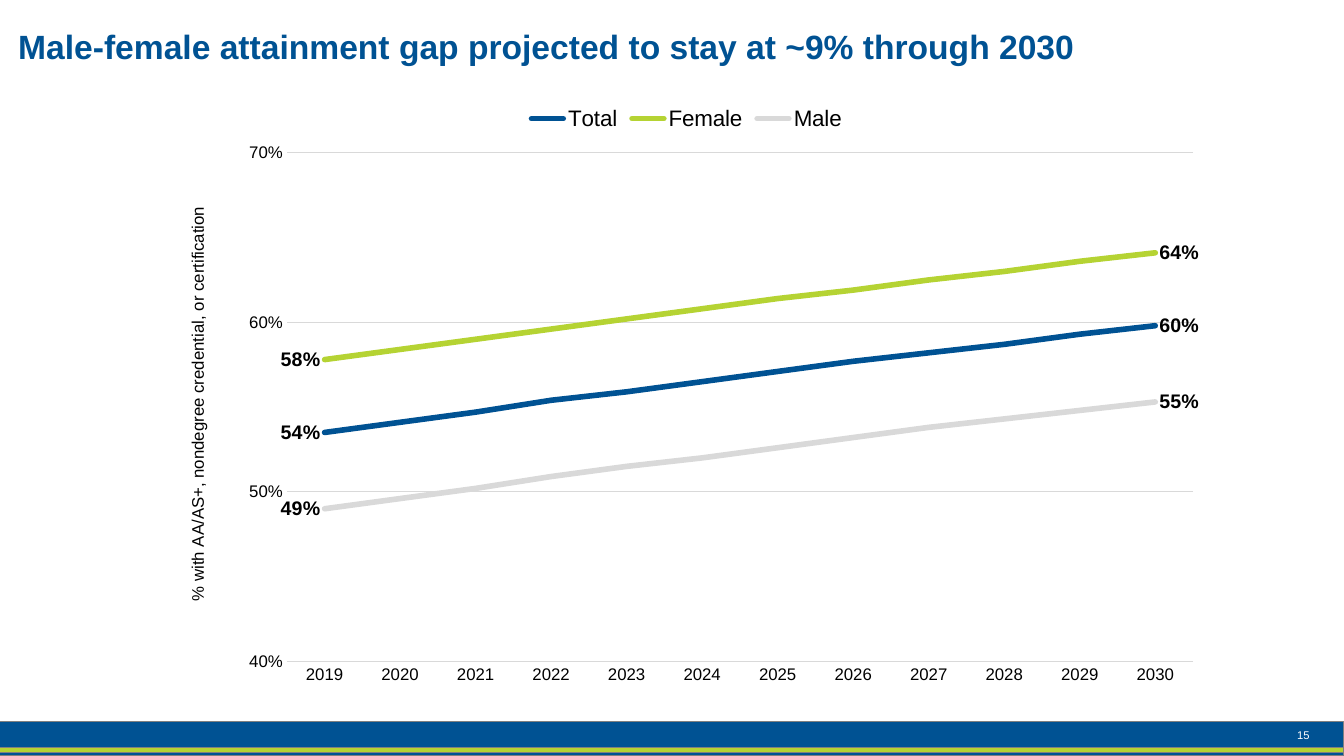
"""Build a slide charting projected attainment by gender from 2019 to 2030."""
from typing import NamedTuple

from lxml import etree
from pptx import Presentation, util as u
from pptx.chart.data import CategoryChartData
from pptx.dml.color import RGBColor
from pptx.enum import chart as charts, shapes, text
from pptx.oxml.ns import qn

BLUE = RGBColor(0x00, 0x52, 0x93)
LIME = RGBColor(0xB5, 0xD3, 0x33)
LIGHT_GRAY = RGBColor(0xD9, 0xD9, 0xD9)
GRAY = RGBColor(0x80, 0x80, 0x80)
BLACK = RGBColor(0, 0, 0)
WHITE = RGBColor(0xFF, 0xFF, 0xFF)
FONT = "Arial"


class Band(NamedTuple):
    top: float
    height: float
    color: RGBColor


class Trend(NamedTuple):
    name: str
    color: RGBColor
    values: tuple[float, ...]


BANDS = (Band(7.16, 0.34, BLUE), Band(7.42, 0.05, LIME))
YEARS = [str(year) for year in range(2019, 2031)]
TRENDS = (
    Trend("Total", BLUE, (0.535, 0.541, 0.547, 0.554, 0.559, 0.565,
                          0.571, 0.577, 0.582, 0.587, 0.593, 0.598)),
    Trend("Female", LIME, (0.578, 0.584, 0.590, 0.596, 0.602, 0.608,
                           0.614, 0.619, 0.625, 0.630, 0.636, 0.641)),
    Trend("Male", LIGHT_GRAY, (0.490, 0.496, 0.502, 0.509, 0.515, 0.520,
                               0.526, 0.532, 0.538, 0.543, 0.548, 0.553)),
)


def style_font(font, size: float, color: RGBColor = BLACK, bold: bool = False) -> None:
    """Set the typeface, size, color and weight of a font."""
    font.name, font.size, font.bold = FONT, u.Pt(size), bold
    font.color.rgb = color


def add_text(page, words: str, *, left: float, top: float, width: float, height: float,
             size: float, color: RGBColor, bold: bool = False, wrap: bool = True,
             align=text.PP_ALIGN.LEFT, anchor=text.MSO_ANCHOR.TOP) -> None:
    """Add a text box without margins."""
    box = page.shapes.add_textbox(*map(u.Inches, (left, top, width, height)))
    frame = box.text_frame
    frame.margin_left = frame.margin_right = frame.margin_top = frame.margin_bottom = 0
    frame.word_wrap, frame.vertical_anchor = wrap, anchor
    para = frame.paragraphs[0]
    para.alignment = align
    span = para.add_run()
    span.text = words
    style_font(span.font, size, color, bold)


def add_band(page, band: Band) -> None:
    """Add a full-width footer band."""
    box = page.shapes.add_shape(shapes.MSO_SHAPE.RECTANGLE, 0, u.Inches(band.top),
                                u.Inches(13.33), u.Inches(band.height))
    box.shadow.inherit = False
    box.fill.solid()
    box.fill.fore_color.rgb = band.color
    box.line.color.rgb = GRAY
    box.line.width = u.Pt(0.75)


def set_layout(parent, **settings: str | float) -> None:
    """Give a chart part a manual layout."""
    layout = parent.find(qn("c:layout"))
    if layout is None:
        layout = etree.Element(qn("c:layout"))
        tx = parent.find(qn("c:tx"))
        parent.insert(0 if tx is None else 1, layout)
    manual = etree.SubElement(layout, qn("c:manualLayout"))
    for name, value in settings.items():
        etree.SubElement(manual, qn(f"c:{name}")).set("val", str(value))


def style_axes(chart) -> None:
    """Format both axes, the gridlines and the axis title."""
    years, shares = chart.category_axis, chart.value_axis
    for axis in (years, shares):
        axis.major_tick_mark = axis.minor_tick_mark = charts.XL_TICK_MARK.NONE
        style_font(axis.tick_labels.font, 12)
    shares.minimum_scale, shares.maximum_scale, shares.major_unit = 0.4, 0.7, 0.1
    shares.tick_labels.number_format = "0%"
    shares.tick_labels.number_format_is_linked = False
    shares.format.line.fill.background()
    for line in (years.format.line, shares.major_gridlines.format.line):
        line.color.rgb = LIGHT_GRAY
        line.width = u.Pt(0.75)
    title = shares.axis_title
    frame = title.text_frame
    span = frame.paragraphs[0].add_run()
    span.text = "% with AA/AS+, nondegree credential, or certification"
    style_font(span.font, 12)
    body = title._element.find(".//" + qn("a:bodyPr"))
    body.set("rot", "-5400000")
    body.set("vert", "horz")
    set_layout(title._element, xMode="edge", yMode="edge", x=0.02, y=0.18)


def style_trend(series, trend: Trend) -> None:
    """Format a line and label its two ends."""
    series.smooth = False
    series.marker.style = charts.XL_MARKER_STYLE.NONE
    series.format.line.color.rgb = trend.color
    series.format.line.width = u.Pt(4)
    series._element.find(".//" + qn("a:ln")).set("cap", "rnd")
    series.data_labels.show_value = False
    ends = ((0, charts.XL_LABEL_POSITION.LEFT),
            (len(YEARS) - 1, charts.XL_LABEL_POSITION.RIGHT))
    for index, position in ends:
        label = series.points[index].data_label
        style_font(label.font, 14, bold=True)
        label.position = position


def add_trend_chart(page) -> None:
    """Add the attainment line chart."""
    data = CategoryChartData(number_format="0%")
    data.categories = YEARS
    for trend in TRENDS:
        data.add_series(trend.name, trend.values)
    chart = page.shapes.add_chart(charts.XL_CHART_TYPE.LINE,
                                  *map(u.Inches, (1.62, 0.94, 10.38, 6)), data).chart
    chart.has_title = False
    style_font(chart.font, 12)
    chart.has_legend = True
    chart.legend.position = charts.XL_LEGEND_POSITION.TOP
    chart.legend.include_in_layout = False
    style_font(chart.legend.font, 16)
    style_axes(chart)
    plot = chart.plots[0]
    plot.vary_by_categories = False
    for series, trend in zip(plot.series, TRENDS):
        style_trend(series, trend)
    set_layout(chart._chartSpace.find(".//" + qn("c:plotArea")), layoutTarget="inner",
               xMode="edge", yMode="edge", x=0.118, y=0.096, w=0.866, h=0.841)


def main() -> None:
    """Build and save the deck."""
    deck = Presentation()
    deck.slide_width, deck.slide_height = u.Inches(13.33), u.Inches(7.5)
    page = deck.slides.add_slide(deck.slide_layouts[6])
    for band in BANDS:
        add_band(page, band)
    add_text(page, "15", left=12.85, top=7.23, width=0.14, height=0.13, size=8,
             color=WHITE, wrap=False, align=text.PP_ALIGN.RIGHT,
             anchor=text.MSO_ANCHOR.MIDDLE)
    add_text(page, "Male-female attainment gap projected to stay at ~9% through 2030",
             left=0.18, top=0.26, width=12.82, height=0.4, size=24, color=BLUE, bold=True)
    add_trend_chart(page)
    deck.save("out.pptx")


if __name__ == "__main__":
    main()
